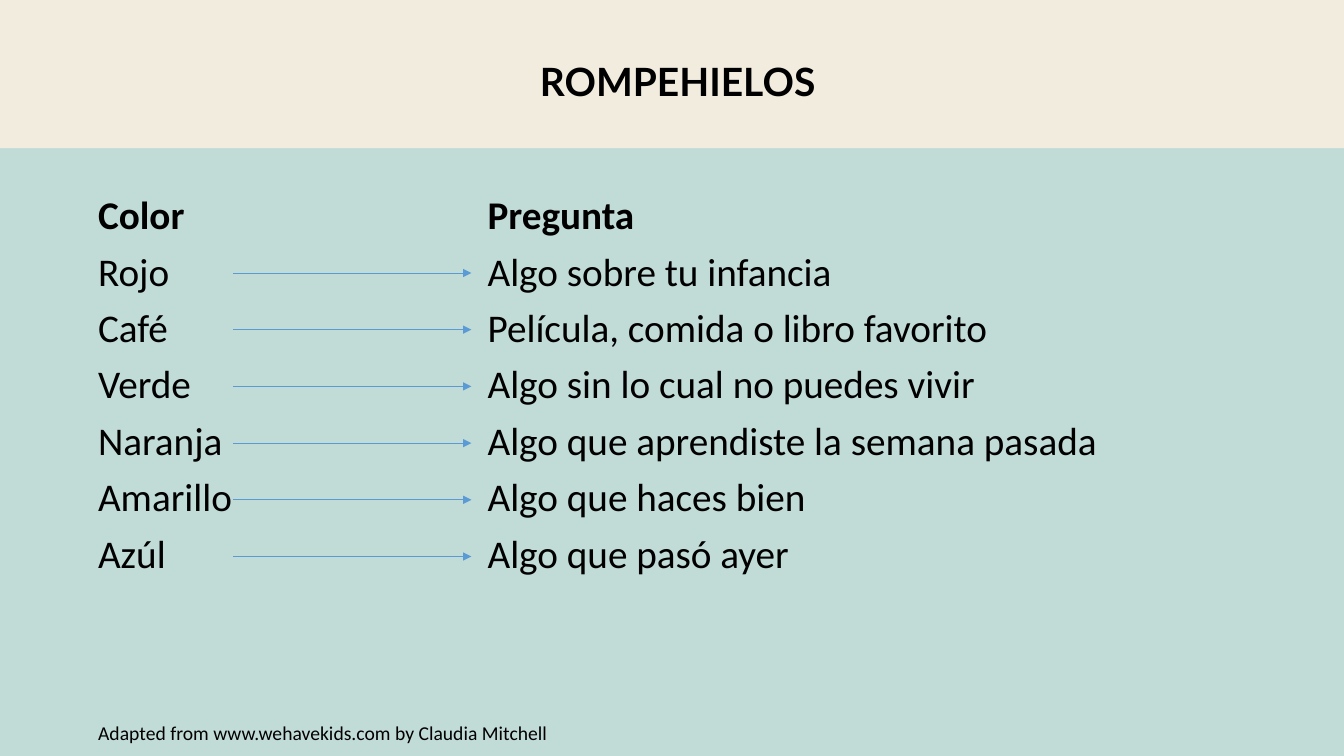
from lxml.etree import SubElement as Sub
from pptx import Presentation
from pptx.dml.color import RGBColor as Rgb
from pptx.enum.shapes import MSO_CONNECTOR as Conn, MSO_SHAPE as Shape
from pptx.enum.text import MSO_ANCHOR as Anchor, MSO_AUTO_SIZE as Auto, PP_ALIGN as Align
from pptx.oxml.ns import qn
from pptx.util import Pt

PX = 9525
HUES = {"back": "C1DBD7", "band": "F2ECDF", "ink": "000000", "arrow": "5B9BD5"}
ROWS = [
    ("Color", "Pregunta"),
    ("Rojo", "Algo sobre tu infancia"),
    ("Café", "Película, comida o libro favorito"),
    ("Verde", "Algo sin lo cual no puedes vivir"),
    ("Naranja", "Algo que aprendiste la semana pasada"),
    ("Amarillo", "Algo que haces bien"),
    ("Azúl", "Algo que pasó ayer"),
]


class Board:
    def __init__(self, wide, high):
        self.deck = Presentation()
        self.deck.slide_width, self.deck.slide_height = wide * PX, high * PX
        self.slide = self.deck.slides.add_slide(self.deck.slide_layouts[5])
        self.shapes = self.slide.shapes
        self.paint(self.slide.background.fill, "back")

    def paint(self, fill, hue):
        fill.solid()
        fill.fore_color.rgb = Rgb.from_string(HUES[hue])

    def style(self, para, size, face="Calibri", bold=False):
        for run in para.runs:
            font = run.font
            font.name, font.size, font.bold = face, Pt(size), bold
            font.color.rgb = Rgb.from_string(HUES["ink"])

    def band(self, *box):
        rect = self.shapes.add_shape(Shape.RECTANGLE, *[n * PX for n in box])
        rect.shadow.inherit = False
        self.paint(rect.fill, "band")
        rect.line.fill.background()

    def title(self, text, *box):
        head = self.shapes.title
        head.left, head.top, head.width, head.height = [n * PX for n in box]
        frame = head.text_frame
        frame.text = text
        frame.word_wrap = True
        frame.auto_size = Auto.NONE
        frame.vertical_anchor = Anchor.MIDDLE
        para = frame.paragraphs[0]
        para.alignment, para.line_spacing = Align.CENTER, 0.9
        self.style(para, 48, "Lato", True)
        para.runs[0].font._element.set("baseline", "30000")
        self.shapes._spTree.append(head._element)

    def text(self, lines, *box):
        frame = self.shapes.add_textbox(*[n * PX for n in box]).text_frame
        frame.word_wrap = True
        frame.text = "\n".join(lines)
        return frame

    def column(self, lines, *box):
        for i, para in enumerate(self.text(lines, *box).paragraphs):
            para.line_spacing = 0.9
            para.space_before = Pt(10 if i else 0)
            self.style(para, 28, bold=i == 0)

    def note(self, line, *box):
        frame = self.text([line], *box)
        frame.auto_size = Auto.SHAPE_TO_FIT_TEXT
        self.style(frame.paragraphs[0], 14)

    def arrow(self, x1, x2, y):
        link = self.shapes.add_connector(Conn.STRAIGHT, x1 * PX, y * PX, x2 * PX, y * PX)
        self.paint(link.line.fill, "arrow")
        link.line.width = Pt(0.5)
        Sub(link.line._get_or_add_ln(), qn("a:tailEnd"), type="triangle")
        Sub(link._element.spPr, qn("a:effectLst"))


def main():
    board = Board(1280, 720)
    board.band(0, 0, 1280, 141)
    names, asks = zip(*ROWS)
    board.column(names, 84, 182, 309, 530)
    board.column(asks, 455, 182, 624, 530)
    for i in range(len(ROWS) - 1):
        board.arrow(222, 449, 260 + 54 * i)
    board.note("Adapted from www.wehavekids.com by Claudia Mitchell", 84, 682, 679, 33)
    board.title("ROMPEHIELOS", 455, 12, 381, 157)
    board.deck.save("out.pptx")


if __name__ == "__main__":
    main()
